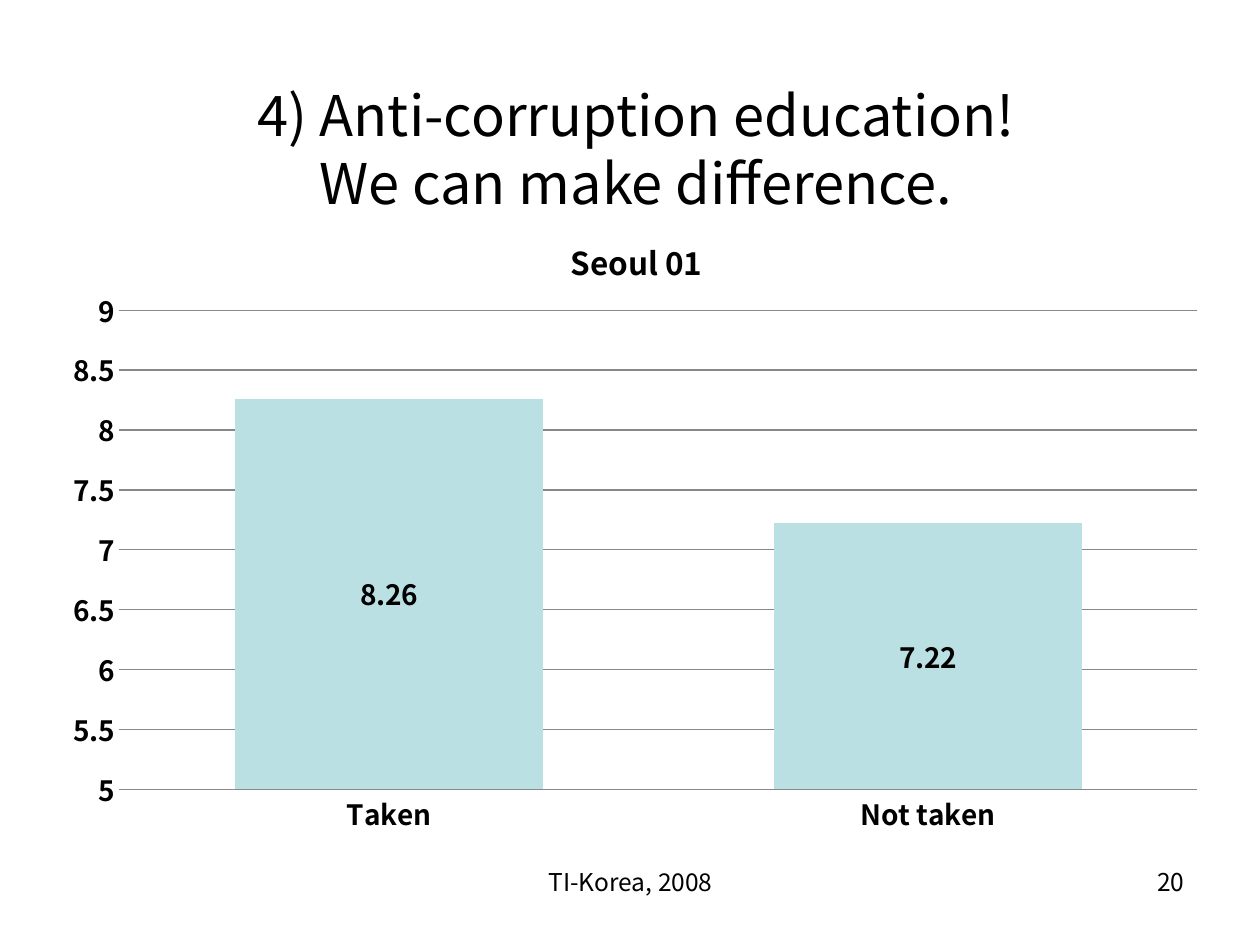
from lxml import etree
from pptx import Presentation
from pptx.chart.data import CategoryChartData
from pptx.dml.color import RGBColor
from pptx.enum.chart import XL_CHART_TYPE, XL_LABEL_POSITION, XL_TICK_MARK
from pptx.enum.text import MSO_ANCHOR, PP_ALIGN
from pptx.oxml.ns import qn
from pptx.util import Inches, Pt

STACKED = XL_CHART_TYPE.COLUMN_STACKED
CENTERED_LABEL = XL_LABEL_POSITION.CENTER
NO_TICK = XL_TICK_MARK.NONE
TOP, MIDDLE = MSO_ANCHOR.TOP, MSO_ANCHOR.MIDDLE
CENTER, RIGHT = PP_ALIGN.CENTER, PP_ALIGN.RIGHT

THEME = {
    "font": "Noto Sans CJK KR",
    "text": RGBColor(0x00, 0x00, 0x00),
    "bar": RGBColor(0xBB, 0xE0, 0xE3),
    "grid": RGBColor(0x88, 0x88, 0x88),
    "title": 32, "chart_title": 18, "chart": 16, "footer": 14,
}

# text, (left, top, width, height), size, alignment, anchor
TEXTS = [
    ("4) Anti-corruption education!\vWe can make difference.",
     (0.55, 0.55, 9, 1.25), "title", CENTER, MIDDLE),
    ("TI-Korea, 2008", (3.42, 6.83, 3.17, 0.52), "footer", CENTER, TOP),
    ("20", (7.17, 6.83, 2.33, 0.52), "footer", RIGHT, TOP),
]
CHART = {
    "at": (0.39, 1.56, 9.3, 5.16),
    "title": "Seoul 01",
    "categories": ["Taken", "Not taken"],
    "series": ("Series 1", [8.26, 7.22]),
    "title_layout": {"x": 0.44, "y": 0.05},
    "plot_layout": {"x": 0.06, "y": 0.175, "w": 0.92, "h": 0.737},
}


def set_format(target, values):
    for name, value in values.items():
        setattr(target, name, value)


def style_font(font, size, bold=False):
    set_format(font, {"name": THEME["font"], "size": Pt(THEME[size]), "bold": bold})
    font.color.rgb = THEME["text"]


def add_text(page, text, at, size, alignment, anchor):
    frame = page.shapes.add_textbox(*map(Inches, at)).text_frame
    set_format(frame, {"word_wrap": True, "vertical_anchor": anchor, "text": text})
    para = frame.paragraphs[0]
    para.alignment = alignment
    for span in para.runs:
        style_font(span.font, size)


def place(element, after, fractions, inner=False):
    """Fix a chart part at fractions of the chart area."""
    for old in element.findall(qn("c:layout")):
        element.remove(old)
    layout = etree.Element(qn("c:layout"))
    manual = etree.SubElement(layout, qn("c:manualLayout"))
    settings = {"layoutTarget": "inner"} if inner else {}
    settings |= {"xMode": "edge", "yMode": "edge"} | fractions
    for name, value in settings.items():
        etree.SubElement(manual, qn(f"c:{name}")).set("val", str(value))
    if after is None:
        element.insert(0, layout)
    else:
        after.addnext(layout)


def add_column_chart(page):
    data = CategoryChartData()
    data.categories = CHART["categories"]
    data.add_series(*CHART["series"])
    chart = page.shapes.add_chart(STACKED, *map(Inches, CHART["at"]), data).chart
    chart.has_legend = False
    style_font(chart.font, "chart", bold=True)

    title = chart.chart_title
    title.text_frame.text = CHART["title"]
    style_font(title.text_frame.paragraphs[0].runs[0].font, "chart_title", bold=True)
    title.include_in_layout = False
    title_xml = chart.element.find(".//" + qn("c:title"))
    place(title_xml, title_xml.find(qn("c:tx")), CHART["title_layout"])
    place(chart.element.find(".//" + qn("c:plotArea")), None,
          CHART["plot_layout"], inner=True)

    values, categories = chart.value_axis, chart.category_axis
    for axis in (values, categories):
        set_format(axis, {"major_tick_mark": NO_TICK, "minor_tick_mark": NO_TICK})
    set_format(values, {"minimum_scale": 5, "maximum_scale": 9, "major_unit": 0.5,
                        "has_major_gridlines": True})
    values.tick_labels.number_format = "General"
    values.tick_labels.number_format_is_linked = False
    values.format.line.fill.background()
    for line in (values.major_gridlines.format.line, categories.format.line):
        line.color.rgb = THEME["grid"]
        line.width = Pt(0.75)

    plot = chart.plots[0]
    set_format(plot, {"gap_width": 75, "overlap": 100, "vary_by_categories": False,
                      "has_data_labels": True})
    set_format(plot.data_labels, {"show_value": True, "position": CENTERED_LABEL})
    style_font(plot.data_labels.font, "chart", bold=True)
    fill = plot.series[0].format.fill
    fill.solid()
    fill.fore_color.rgb = THEME["bar"]


def main():
    deck = Presentation()
    set_format(deck, {"slide_width": Inches(10), "slide_height": Inches(7.5)})
    page = deck.slides.add_slide(deck.slide_layouts[6])
    for item in TEXTS:
        add_text(page, *item)
    add_column_chart(page)
    deck.save("out.pptx")


if __name__ == "__main__":
    main()
